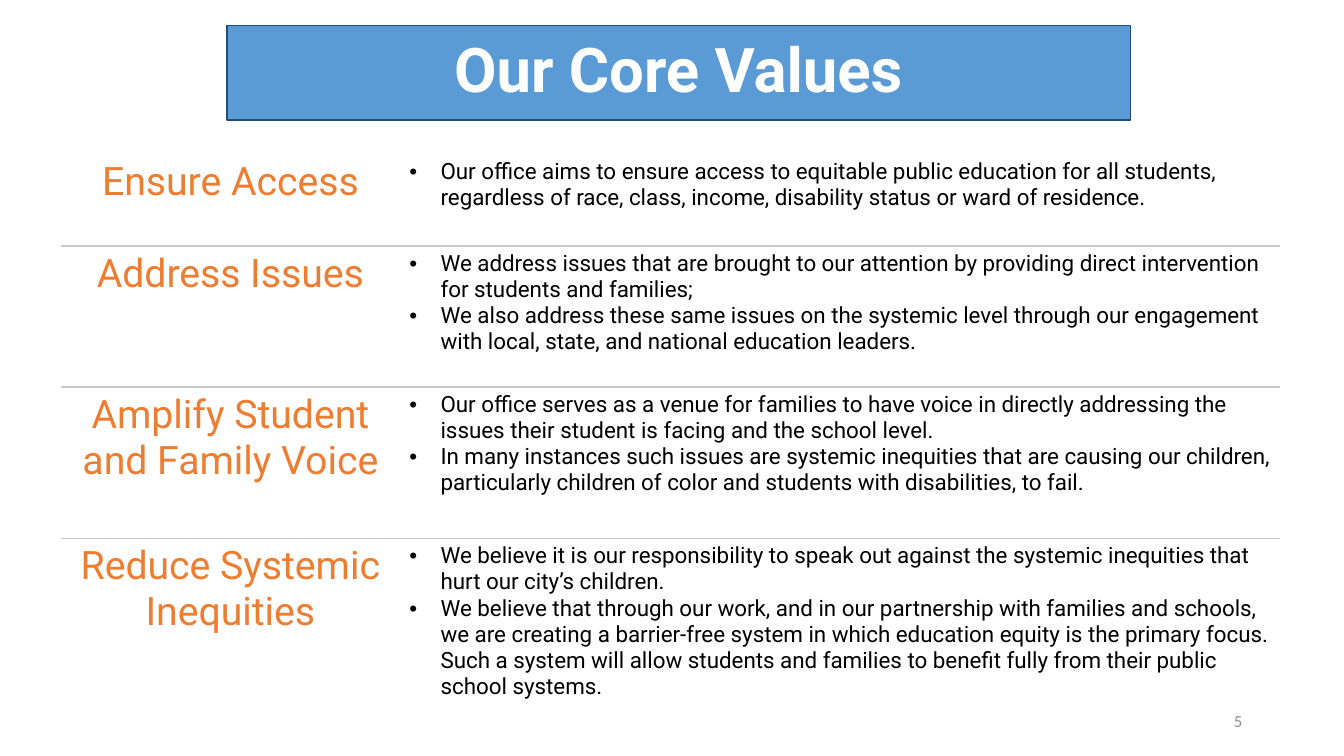
from lxml import etree
from pptx import Presentation
from pptx.dml.color import RGBColor
from pptx.enum.text import MSO_ANCHOR, PP_ALIGN
from pptx.oxml.ns import qn
from pptx.util import Inches, Pt

CENTER, RIGHT, LEFT = PP_ALIGN.CENTER, PP_ALIGN.RIGHT, PP_ALIGN.LEFT
MIDDLE = MSO_ANCHOR.MIDDLE

WHITE = RGBColor(0xFF, 0xFF, 0xFF)
BLACK = RGBColor(0x00, 0x00, 0x00)
BLUE = RGBColor(0x5B, 0x9B, 0xD5)
NAVY = RGBColor(0x1F, 0x4E, 0x79)
ORANGE = RGBColor(0xED, 0x7D, 0x31)
RULE_GRAY = RGBColor(0xC9, 0xC9, 0xC9)
NUMBER_GRAY = RGBColor(0x8C, 0x8C, 0x8C)

COLUMN_WIDTHS = (3.35, 8.74)
ROW_HEIGHTS = (0.91, 1.4, 1.5, 1.54)
CORE_VALUES = [
    ("Ensure Access", [
        "Our office aims to ensure access to equitable public education for all students, "
        "regardless of race, class, income, disability status or ward of residence.",
    ]),
    ("Address Issues", [
        "We address issues that are brought to our attention by providing direct intervention "
        "for students and families;",
        "We also address these same issues on the systemic level through our engagement "
        "with local, state, and national education leaders.",
    ]),
    ("Amplify Student and Family Voice", [
        "Our office serves as a venue for families to have voice in directly addressing the "
        "issues their student is facing and the school level.",
        "In many instances such issues are systemic inequities that are causing our "
        "children, particularly children of color and students with disabilities, to fail.",
    ]),
    ("Reduce Systemic Inequities", [
        "We believe it is our responsibility to speak out against the systemic inequities that "
        "hurt our city’s children.",
        "We believe that through our work, and in our partnership with families and schools, "
        "we are creating a barrier-free system in which education equity is the primary focus. "
        "Such a system will allow students and families to benefit fully from their public "
        "school systems.",
    ]),
]


def format_paragraph(paragraph, size, color, alignment, font_name="Roboto", bold=False):
    """Align a paragraph and style its runs."""
    paragraph.alignment = alignment
    for run in paragraph.runs:
        run.font.name = font_name
        run.font.size = Pt(size)
        run.font.bold = bold
        run.font.color.rgb = color


def add_bullet(paragraph):
    """Give a paragraph a round bullet with a hanging indent."""
    properties = paragraph._p.get_or_add_pPr()
    properties.set("marL", str(Inches(0.31)))
    properties.set("indent", str(-Inches(0.31)))
    etree.SubElement(properties, qn("a:buFont")).set("typeface", "Arial")
    etree.SubElement(properties, qn("a:buChar")).set("char", "•")


def set_borders(cell, ruled_sides):
    """Draw thin gray rules on the named sides of a cell and clear the others."""
    properties = cell._tc.get_or_add_tcPr()
    for side in ("lnL", "lnR", "lnT", "lnB"):
        line = etree.SubElement(properties, qn(f"a:{side}"), w=str(Pt(1)))
        if side in ruled_sides:
            fill = etree.SubElement(line, qn("a:solidFill"))
            etree.SubElement(fill, qn("a:srgbClr")).set("val", str(RULE_GRAY))
        else:
            etree.SubElement(line, qn("a:noFill"))


def add_title(slide, text):
    """Turn the title placeholder into a blue banner."""
    title = slide.shapes.title
    title.left, title.top = Inches(2.25), Inches(0.25)
    title.width, title.height = Inches(8.96), Inches(0.94)
    title.fill.solid()
    title.fill.fore_color.rgb = BLUE
    title.line.color.rgb = NAVY
    title.line.width = Pt(1)
    title.text_frame.text = text
    title.text_frame.vertical_anchor = MIDDLE
    paragraph = title.text_frame.paragraphs[0]
    paragraph.line_spacing = 0.9
    format_paragraph(paragraph, 44, WHITE, CENTER, bold=True)


def add_values_table(slide):
    """Add the table of value names and their bulleted explanations."""
    frame = slide.shapes.add_table(
        len(CORE_VALUES), len(COLUMN_WIDTHS), Inches(0.61), Inches(1.53),
        Inches(sum(COLUMN_WIDTHS)), Inches(sum(ROW_HEIGHTS)))
    table = frame.table
    table.first_row = False
    table.horz_banding = False
    for column, width in zip(table.columns, COLUMN_WIDTHS):
        column.width = Inches(width)
    for index, (name, points) in enumerate(CORE_VALUES):
        table.rows[index].height = Inches(ROW_HEIGHTS[index])
        name_cell, points_cell = table.rows[index].cells
        name_cell.text_frame.text = name
        format_paragraph(name_cell.text_frame.paragraphs[0], 28, ORANGE, CENTER)
        points_cell.text_frame.text = "\n".join(points)
        for paragraph in points_cell.text_frame.paragraphs:
            format_paragraph(paragraph, 16, BLACK, LEFT)
            add_bullet(paragraph)
        ruled_sides = set()
        if index > 0:
            ruled_sides.add("lnT")
        if index < len(CORE_VALUES) - 1:
            ruled_sides.add("lnB")
        for cell in (name_cell, points_cell):
            set_borders(cell, ruled_sides)
            cell.fill.background()


def add_slide_number(slide, text):
    """Add the page number at the lower right."""
    box = slide.shapes.add_textbox(Inches(9.42), Inches(6.95), Inches(3), Inches(0.4))
    box.text_frame.word_wrap = True
    box.text_frame.vertical_anchor = MIDDLE
    box.text_frame.text = text
    format_paragraph(box.text_frame.paragraphs[0], 12, NUMBER_GRAY, RIGHT, "Calibri")


def main():
    """Build and save the core values slide."""
    presentation = Presentation()
    presentation.slide_width = Inches(13.33)
    presentation.slide_height = Inches(7.5)
    slide = presentation.slides.add_slide(presentation.slide_layouts[5])
    add_title(slide, "Our Core Values")
    add_slide_number(slide, "5")
    add_values_table(slide)
    presentation.save("out.pptx")


if __name__ == "__main__":
    main()
